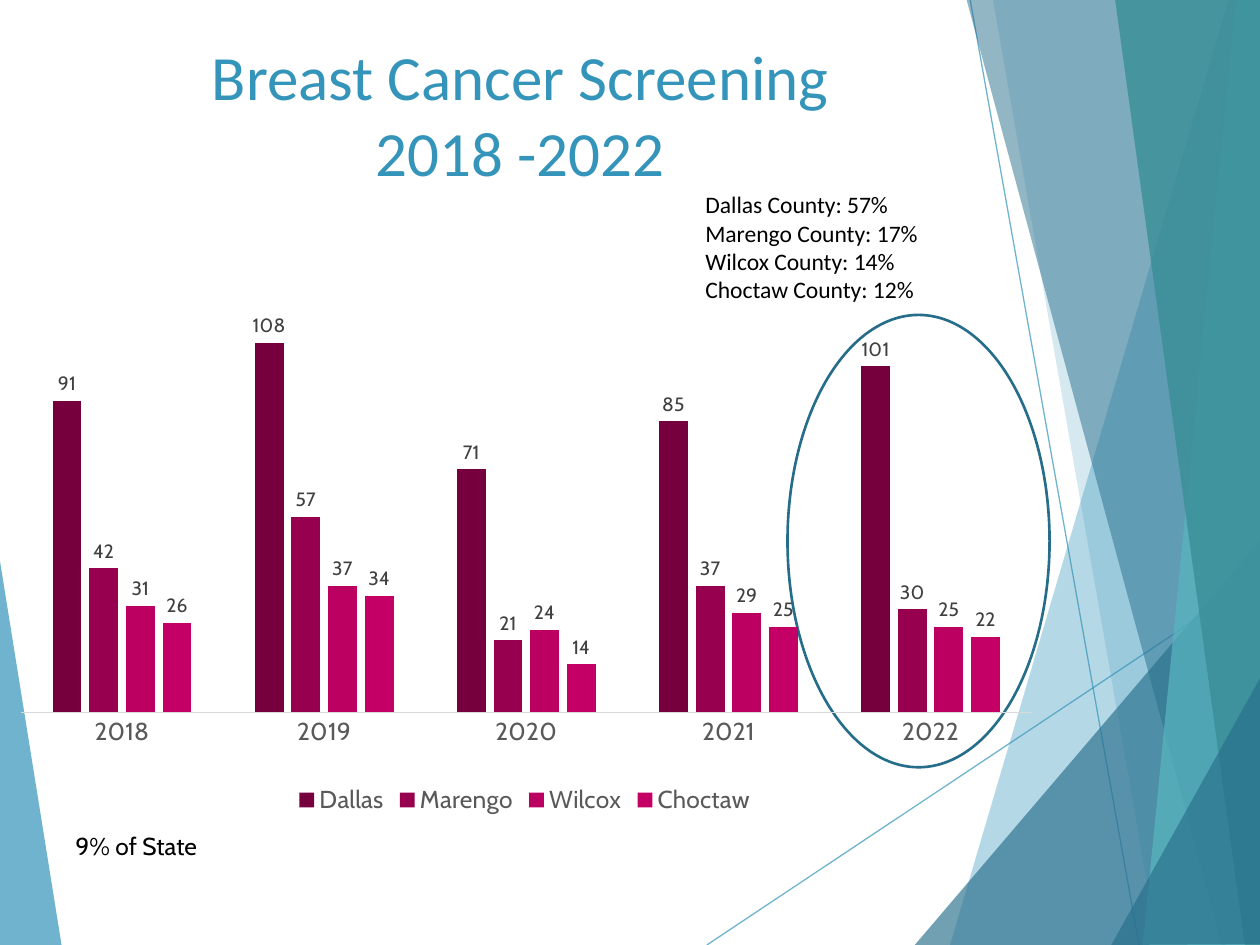
from typing import NamedTuple

import pptx
import pptx.chart.data
import pptx.dml.color
import pptx.enum.chart
import pptx.enum.shapes
import pptx.enum.text
import pptx.oxml
import pptx.oxml.ns
import pptx.util

SLIDE_W = pptx.util.Inches(10)
SLIDE_H = pptx.util.Inches(7.5)
BLUE, DARK_BLUE, TEAL, DARK_TEAL = "3494BA", "276F8B", "58B6C0", "3A8F98"


class Box(NamedTuple):
    """Left, top, width and height in percent of the slide."""
    left: float
    top: float
    width: float
    height: float

    def emu(self) -> tuple:
        return (*point(self.left, self.top), *point(self.width, self.height))


class Facet(NamedTuple):
    """A translucent polygon; corners in percent of the slide."""
    color: str
    opacity: int
    corners: list


class Ray(NamedTuple):
    start: tuple
    end: tuple


class County(NamedTuple):
    name: str
    color: str
    screenings: tuple
    share: int


RAYS = [Ray((56.1, 100), (100.1, 60.93)), Ray((77, 0), (90.4, 100))]
LEFT_FACET = Facet(BLUE, 70, [(-0.1, 58.53), (4.9, 100.1), (-0.1, 100)])
RIGHT_FACETS = [
    Facet(BLUE, 36, [(97.5, 0), (75.4, 100), (100.2, 100.1), (100.1, 0.1)]),
    Facet(BLUE, 20, [(78.8, -0.1), (91.9, 100), (100.1, 100), (100.1, -0.1)]),
    Facet(DARK_BLUE, 66, [(72.6, 100), (100, 57.2), (100.1, 100)]),
    Facet(DARK_BLUE, 50, [(76.7, -0.1), (97, 100), (100.1, 99.9), (100.1, -0.1)]),
    Facet(TEAL, 70, [(98.1, -0.1), (90.7, 100), (100.1, 100), (100, -0.1)]),
    Facet(DARK_TEAL, 82, [(88.5, -0.1), (98.8, 100), (100.2, 100), (100, -0.1)]),
    Facet(DARK_BLUE, 66, [(88.2, 100), (100.2, 71.3), (100.2, 99.9)]),
]
YEARS = ["2018", "2019", "2020", "2021", "2022"]
COUNTIES = [
    County("Dallas", "76003E", (91, 108, 71, 85, 101), 57),
    County("Marengo", "96004F", (42, 57, 21, 37, 30), 17),
    County("Wilcox", "BC0062", (31, 37, 24, 29, 25), 14),
    County("Choctaw", "C40067", (26, 34, 14, 25, 22), 12),
]


def point(x: float, y: float) -> tuple:
    return round(SLIDE_W * x / 100), round(SLIDE_H * y / 100)


def rgb(color: str) -> pptx.dml.color.RGBColor:
    return pptx.dml.color.RGBColor.from_string(color)


def paint(fill, color: str) -> None:
    fill.solid()
    fill.fore_color.rgb = rgb(color)


def set_opacity(shape, percent: int) -> None:
    for color in shape.element.xpath(".//p:spPr//a:srgbClr"):
        alpha = pptx.oxml.ns.qn("a:alpha")
        color.append(color.makeelement(alpha, {"val": str(percent * 1000)}))


def format_font(font, size: float, color: str, name: str) -> None:
    font.size = pptx.util.Pt(size)
    font.name = name
    font.color.rgb = rgb(color)


def write(frame, text: str, *, size: float, font: str, color: str = "000000",
          align=pptx.enum.text.PP_ALIGN.LEFT) -> None:
    frame.word_wrap = True
    frame.vertical_anchor = pptx.enum.text.MSO_ANCHOR.TOP
    frame.text = text
    for paragraph in frame.paragraphs:
        paragraph.alignment = align
        for run in paragraph.runs:
            format_font(run.font, size, color, font)


def draw_facet(slide, facet: Facet) -> None:
    first, *others = [point(*corner) for corner in facet.corners]
    builder = slide.shapes.build_freeform(*first)
    builder.add_line_segments(others, close=True)
    shape = builder.convert_to_shape()
    shape.shadow.inherit = False
    shape.line.fill.background()
    paint(shape.fill, facet.color)
    set_opacity(shape, facet.opacity)


def draw_ray(slide, ray: Ray) -> None:
    line = slide.shapes.add_connector(
        pptx.enum.shapes.MSO_CONNECTOR.STRAIGHT, *point(*ray.start), *point(*ray.end))
    line.line.width = pptx.util.Pt(0.75)
    paint(line.line.fill, BLUE)
    set_opacity(line, 70)
    properties = line.element.spPr
    properties.append(properties.makeelement(pptx.oxml.ns.qn("a:effectLst"), {}))


def place_plot(chart, x: float, y: float, w: float, h: float) -> None:
    """Fix the inner plot area and leave the chart's background clear."""
    namespaces = pptx.oxml.ns.nsdecls("c", "a")
    values = "".join(f'<c:{tag} val="{value}"/>'
                     for tag, value in zip("xywh", (x, y, w, h)))
    layout = pptx.oxml.parse_xml(
        f'<c:layout {namespaces}><c:manualLayout><c:layoutTarget val="inner"/>'
        f'<c:xMode val="edge"/><c:yMode val="edge"/>{values}'
        '</c:manualLayout></c:layout>')
    plot_area = chart.element.xpath("c:chart/c:plotArea")[0]
    for old in plot_area.xpath("c:layout"):
        plot_area.remove(old)
    plot_area.insert(0, layout)
    clear = pptx.oxml.parse_xml(
        f"<c:spPr {namespaces}><a:noFill/><a:ln><a:noFill/></a:ln></c:spPr>")
    chart.element.xpath("c:chart")[0].addnext(clear)


def draw_screenings(slide, box: Box) -> None:
    data = pptx.chart.data.CategoryChartData()
    data.categories = YEARS
    for county in COUNTIES:
        data.add_series(county.name, county.screenings)
    kinds = pptx.enum.chart
    chart = slide.shapes.add_chart(
        kinds.XL_CHART_TYPE.COLUMN_CLUSTERED, *box.emu(), data).chart
    chart.has_title = False
    format_font(chart.font, 10, "000000", "Cabin")
    place_plot(chart, 0.02, 0.029, 0.963, 0.769)

    # Columns and their values
    plot = chart.plots[0]
    plot.gap_width, plot.overlap, plot.vary_by_categories = 219, -27, False
    for series, county in zip(plot.series, COUNTIES):
        paint(series.format.fill, county.color)
        labels = series.data_labels
        labels.show_value = True
        labels.position = kinds.XL_LABEL_POSITION.OUTSIDE_END
        format_font(labels.font, 11, "404040", "Cabin")

    # Axes and legend
    years = chart.category_axis
    years.major_tick_mark = kinds.XL_TICK_MARK.NONE
    years.format.line.width = pptx.util.Pt(0.75)
    paint(years.format.line.fill, "D9D9D9")
    format_font(years.tick_labels.font, 14, "595959", "Cabin")
    counts = chart.value_axis
    counts.minimum_scale, counts.maximum_scale = 0, 120
    counts.has_major_gridlines = False
    counts.visible = False
    chart.has_legend = True
    chart.legend.position = kinds.XL_LEGEND_POSITION.BOTTOM
    chart.legend.include_in_layout = False
    format_font(chart.legend.font, 14, "595959", "Cabin")


def main() -> None:
    deck = pptx.Presentation()
    deck.slide_width, deck.slide_height = SLIDE_W, SLIDE_H
    slide = deck.slides.add_slide(deck.slide_layouts[5])

    # Faceted backdrop
    draw_facet(slide, LEFT_FACET)
    for ray in RAYS:
        draw_ray(slide, ray)
    for facet in RIGHT_FACETS:
        draw_facet(slide, facet)

    # Title, in front of the backdrop
    title = slide.shapes.title
    title.left, title.top, title.width, title.height = Box(1.7, 3.33, 79.2, 20).emu()
    write(title.text_frame, "Breast Cancer Screening\v2018 -2022", size=36,
          font="Calibri", color=BLUE, align=pptx.enum.text.PP_ALIGN.CENTER)
    slide.shapes.element.append(title.element)

    # Ring around the latest year, then the chart
    ring = slide.shapes.add_shape(
        pptx.enum.shapes.MSO_SHAPE.OVAL, *Box(62.5, 33.33, 20.8, 47.87).emu())
    ring.shadow.inherit = False
    ring.fill.background()
    ring.line.width = pptx.util.Pt(1.5)
    paint(ring.line.fill, "266D8A")
    draw_screenings(slide, Box(0, 30.27, 83.3, 56.53))

    # State share and county shares
    state = slide.shapes.add_textbox(*Box(5, 87.33, 16.7, 4.53).emu())
    write(state.text_frame, "9% of State", size=14, font="Cabin")
    shares = slide.shapes.add_textbox(*Box(55, 19.47, 23.1, 13.47).emu())
    write(shares.text_frame,
          "\n".join(f"{county.name} County: {county.share}%" for county in COUNTIES),
          size=13.5, font="Calibri")

    deck.save("out.pptx")


if __name__ == "__main__":
    main()
